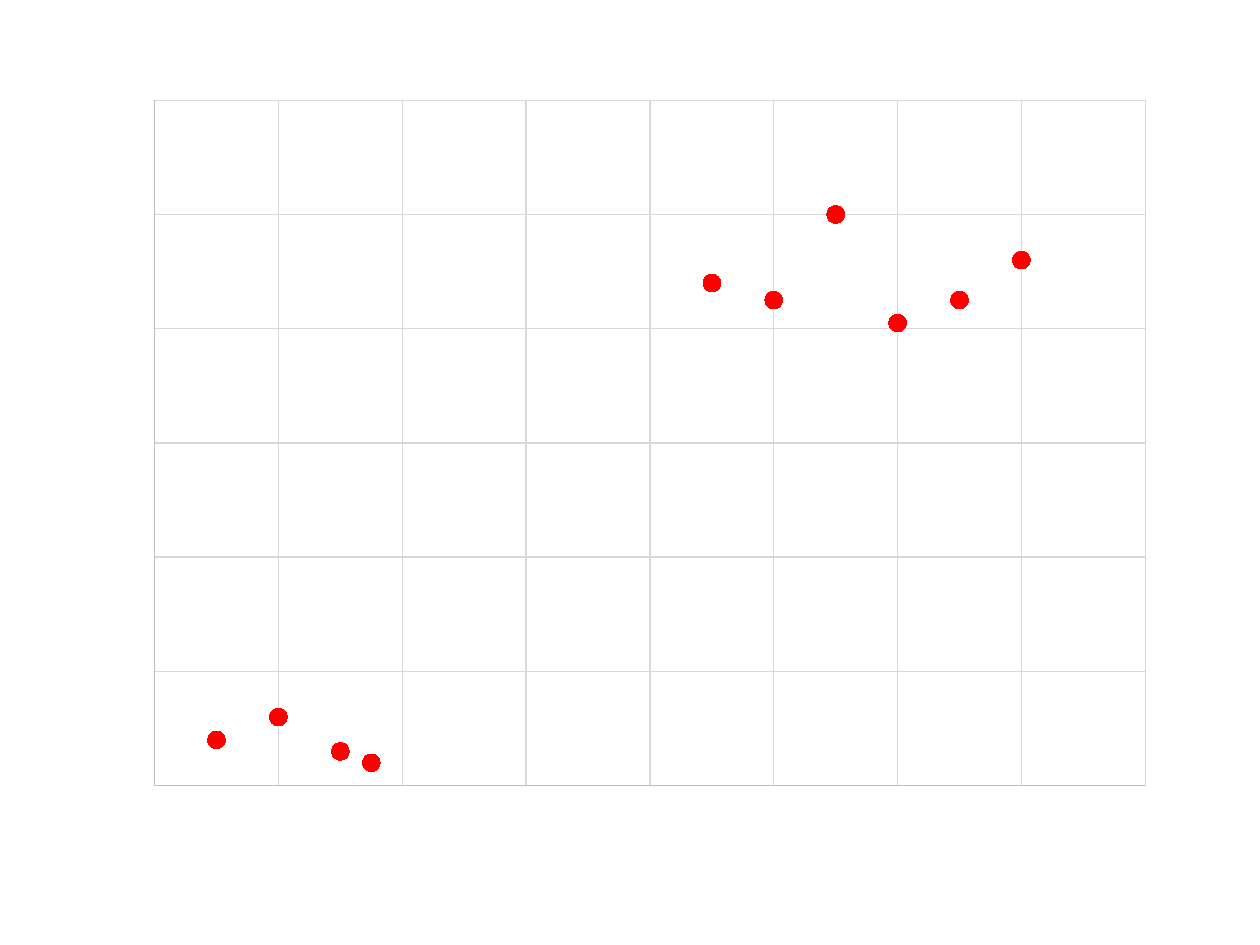
from pptx import Presentation
from pptx.chart.data import XyChartData
from pptx.dml.color import RGBColor
from pptx.enum.chart import (
    XL_CHART_TYPE, XL_MARKER_STYLE, XL_TICK_LABEL_POSITION, XL_TICK_MARK)
from pptx.util import Emu, Pt

SCALE = 914400 // 126
COLORS = {"text": "000000", "label": "595959", "axis": "BFBFBF",
          "grid": "D9D9D9", "dot": "FF0000"}
POINTS = [(1, 8), (2, 12), (3, 6), (3.5, 4), (9, 88), (10, 85),
          (11, 100), (12, 81), (13, 85), (14, 92)]


def px(n):
    return Emu(n * SCALE)


def color(name):
    return RGBColor.from_string(COLORS[name])


def set_font(font, size, name):
    font.size = Pt(size)
    font.name = "Calibri"
    font.color.rgb = color(name)


def set_line(line, name):
    line.width = Pt(0.75)
    line.color.rgb = color(name)


def style_axis(axis, top, step):
    axis.minimum_scale = 0
    axis.maximum_scale = top
    axis.major_unit = step
    axis.major_tick_mark = axis.minor_tick_mark = XL_TICK_MARK.NONE
    axis.tick_label_position = XL_TICK_LABEL_POSITION.NONE
    set_font(axis.tick_labels.font, 9, "label")
    axis.has_major_gridlines = True
    set_line(axis.major_gridlines.format.line, "grid")
    set_line(axis.format.line, "axis")


def style_dots(series):
    series.format.line.fill.background()
    mark = series.marker
    mark.style = XL_MARKER_STYLE.CIRCLE
    mark.size = 10
    mark.format.fill.solid()
    mark.format.fill.fore_color.rgb = color("dot")
    mark.format.line.color.rgb = color("dot")


def add_scatter(slide, x, y, w, h):
    data = XyChartData()
    series = data.add_series("Series 1")
    for point in POINTS:
        series.add_data_point(*point)
    chart = slide.shapes.add_chart(
        XL_CHART_TYPE.XY_SCATTER, px(x), px(y), px(w), px(h), data).chart
    chart.has_title = False
    chart.has_legend = False
    set_font(chart.font, 10, "text")
    plot = chart.plots[0]
    plot.vary_by_categories = False
    style_dots(plot.series[0])
    style_axis(chart.category_axis, 16, 2)
    style_axis(chart.value_axis, 120, 20)


def main():
    deck = Presentation()
    deck.slide_width, deck.slide_height = px(1260), px(945)
    slide = deck.slides.add_slide(deck.slide_layouts[6])
    add_scatter(slide, 134, 86, 1032, 714)
    deck.save("out.pptx")


if __name__ == "__main__":
    main()
